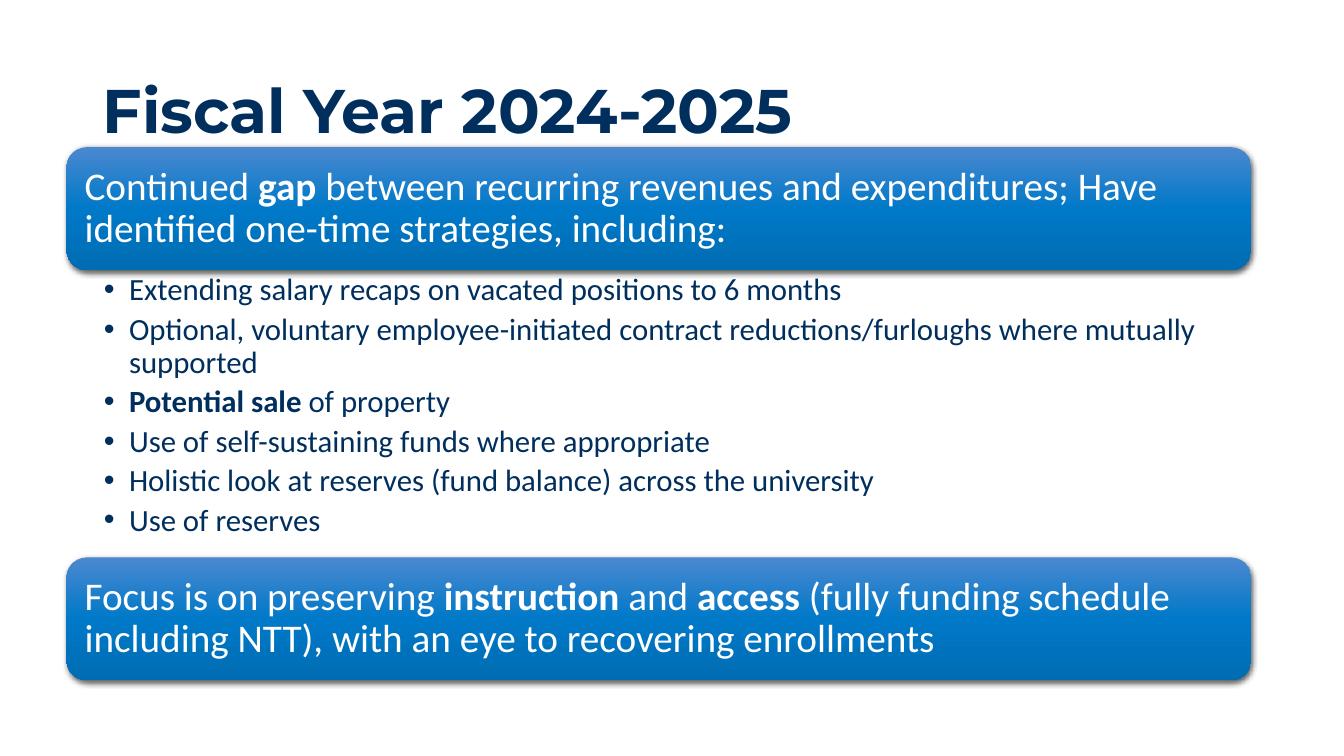
"""Build the Fiscal Year 2024-2025 budget strategy slide."""
from copy import deepcopy
from dataclasses import dataclass

from lxml import etree
from pptx import Presentation
from pptx import util as u
from pptx.dml.color import RGBColor
from pptx.enum import shapes, text
from pptx.oxml.ns import qn

PX = 9144
NAVY = RGBColor(0x00, 0x2F, 0x5E)
WHITE = RGBColor(0xFF, 0xFF, 0xFF)
BLACK = RGBColor(0x00, 0x00, 0x00)
BANNER_STOPS = (
    (0, RGBColor(0x4B, 0x88, 0xD0)),
    (0.5, RGBColor(0x00, 0x79, 0xC8)),
    (1, RGBColor(0x00, 0x6C, 0xB2)),
)


@dataclass(frozen=True)
class Box:
    left: int
    top: int
    width: int
    height: int

    def emu(self) -> list[int]:
        return [v * PX for v in (self.left, self.top, self.width, self.height)]


@dataclass(frozen=True)
class Run:
    text: str
    bold: bool = False


@dataclass(frozen=True)
class Banner:
    top: int
    runs: tuple[Run, ...]


BANNERS = (
    Banner(146, (
        Run("Continued "), Run("gap", bold=True),
        Run(" between recurring revenues and expenditures; Have identified "
            "one-time strategies, including:"),
    )),
    Banner(553, (
        Run("Focus is on preserving "), Run("instruction", bold=True),
        Run(" and "), Run("access", bold=True),
        Run(" (fully funding schedule including NTT), with an eye to "
            "recovering enrollments"),
    )),
)
STRATEGIES = (
    (Run("Extending salary recaps on vacated positions to 6 months"),),
    (Run("Optional, voluntary employee-initiated contract "
         "reductions/furloughs where mutually supported"),),
    (Run("Potential sale", bold=True), Run(" of property")),
    (Run("Use of self-sustaining funds where appropriate"),),
    (Run("Holistic look at reserves (fund balance) across the university"),),
    (Run("Use of reserves"),),
)


def write(sp, paragraphs, *, size: int, font: str, color: RGBColor,
          anchor=text.MSO_ANCHOR.MIDDLE, insets=(10, 5, 10, 5),
          after: float = 0, indent: int = 0) -> None:
    tf = sp.text_frame
    tf.word_wrap = True
    tf.auto_size = text.MSO_AUTO_SIZE.NONE
    tf.vertical_anchor = anchor
    tf.margin_left, tf.margin_top, tf.margin_right, tf.margin_bottom = (
        v * PX for v in insets)
    for i, runs in enumerate(paragraphs):
        p = tf.add_paragraph() if i else tf.paragraphs[0]
        p.alignment = text.PP_ALIGN.LEFT
        p.line_spacing = 0.9
        p.space_before = u.Pt(0)
        p.space_after = u.Pt(after)
        if indent:
            pPr = p._p.get_or_add_pPr()
            pPr.set("marL", str(indent * PX))
            pPr.set("indent", str(-indent * PX))
        for run in runs:
            r = p.add_run()
            r.text = run.text
            r.font.name = font
            r.font.size = u.Pt(size)
            r.font.bold = run.bold
            r.font.color.rgb = color


def place(sp, box: Box) -> None:
    sp.left, sp.top, sp.width, sp.height = box.emu()


def add_shadow(sp) -> None:
    sp.shadow.inherit = False
    effects = sp._element.spPr.find(qn("a:effectLst"))
    shadow = etree.SubElement(effects, qn("a:outerShdw"), blurRad="57150",
                              dist="19050", dir="5400000", algn="ctr",
                              rotWithShape="0")
    clr = etree.SubElement(shadow, qn("a:srgbClr"), val=str(BLACK))
    etree.SubElement(clr, qn("a:alpha"), val="63000")


def add_banner(s, banner: Banner) -> None:
    sp = s.shapes.add_shape(shapes.MSO_SHAPE.ROUNDED_RECTANGLE,
                            *Box(66, banner.top, 1175, 122).emu())
    sp.fill.gradient()
    sp.fill.gradient_angle = 270
    stops = sp._element.spPr.find(".//" + qn("a:gsLst"))
    stops.append(deepcopy(stops[0]))
    for stop, (position, color) in zip(sp.fill.gradient_stops, BANNER_STOPS):
        stop.position = position
        stop.color.rgb = color
    sp.line.fill.background()
    add_shadow(sp)
    write(sp, [banner.runs], size=28, font="Calibri", color=WHITE,
          insets=(12, 12, 12, 12))


def main() -> None:
    prs = Presentation()
    prs.slide_width, prs.slide_height = 1333 * PX, 750 * PX
    s = prs.slides.add_slide(prs.slide_layouts[1])

    title, body = s.placeholders
    place(title, Box(92, 40, 1150, 145))
    write(title, [[Run("Fiscal Year 2024-2025", bold=True)]], size=44,
          font="Montserrat", color=NAVY)

    place(body, Box(66, 268, 1175, 285))
    write(body, STRATEGIES, size=22, font="Calibri", color=NAVY,
          anchor=text.MSO_ANCHOR.TOP, insets=(37, 4, 22, 4), after=4.4,
          indent=25)

    for banner in BANNERS:
        add_banner(s, banner)
    prs.save("out.pptx")


if __name__ == "__main__":
    main()
